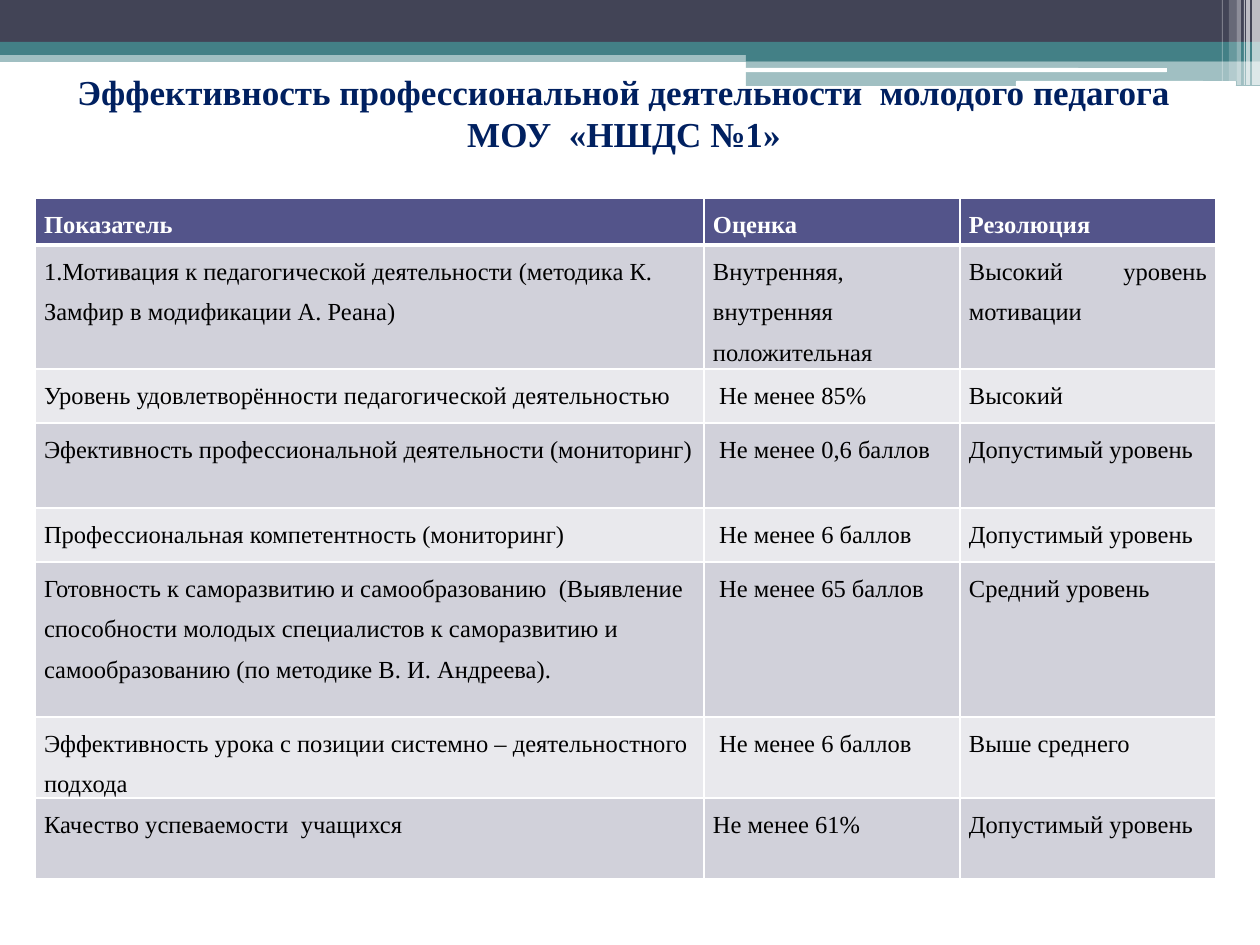
from dataclasses import dataclass

from lxml.etree import SubElement
from pptx import Presentation
from pptx.dml.color import RGBColor
from pptx.enum.shapes import MSO_SHAPE
from pptx.enum.text import MSO_ANCHOR, MSO_AUTO_SIZE, PP_ALIGN
from pptx.oxml.ns import qn
from pptx.util import Pt


@dataclass(frozen=True)
class Theme:
    font: str = "Times New Roman"
    title_size: int = 20
    cell_size: int = 14
    title: str = "002060"
    dark: str = "424456"
    teal: str = "438086"
    white: str = "FFFFFF"
    text: str = "000000"
    header: str = "53548A"
    odd: str = "D1D1DA"
    even: str = "E9E9ED"


THEME = Theme()
SCALE = 914400 / 126

TITLE = [
    "Эффективность профессиональной деятельности  молодого педагога",
    "МОУ  «НШДС №1»",
]
COLS = [669, 256, 256]
HEIGHTS = [47, 124, 54, 85, 54, 155, 81, 81]
ROWS = [
    ("Показатель", "Оценка", "Резолюция"),
    ("1.Мотивация к педагогической деятельности (методика К. Замфир в модификации А. Реана)",
     "Внутренняя, внутренняя положительная", "Высокий уровень мотивации"),
    ("Уровень удовлетворённости педагогической деятельностью", " Не менее 85%", "Высокий"),
    ("Эфективность профессиональной деятельности (мониторинг)",
     " Не менее 0,6 баллов", "Допустимый уровень"),
    ("Профессиональная компетентность (мониторинг)", " Не менее 6 баллов", "Допустимый уровень"),
    ("Готовность к саморазвитию и самообразованию  (Выявление способности молодых специалистов "
     "к саморазвитию и самообразованию (по методике В. И. Андреева).",
     " Не менее 65 баллов", "Средний уровень"),
    ("Эффективность урока с позиции системно – деятельностного подхода",
     " Не менее 6 баллов", "Выше среднего"),
    ("Качество успеваемости  учащихся", "Не менее 61%", "Допустимый уровень"),
]


def px(n):
    """Turn px into EMU."""
    return round(n * SCALE)


def rgb(color):
    """Turn a hex string into a colour."""
    return RGBColor.from_string(color)


def style(p, size, color, bold, align):
    """Format a whole paragraph."""
    p.alignment = align
    p.font.name = THEME.font
    p.font.size = Pt(size)
    p.font.bold = bold
    p.font.color.rgb = rgb(color)


def add_bar(s, box, color, alpha=100, kind=MSO_SHAPE.RECTANGLE):
    """Add one plain bar, optionally see-through."""
    sp = s.shapes.add_shape(kind, *map(px, box))
    sp.shadow.inherit = False
    sp.line.fill.background()
    sp.fill.solid()
    sp.fill.fore_color.rgb = rgb(color)
    if alpha < 100:
        clr = sp.fill._xPr.find(qn("a:solidFill"))[0]
        SubElement(clr, qn("a:alpha"), val=str(alpha * 1000))


def add_banner(s, x, y, w):
    """Draw the layered bands and the stripes at their right end."""
    step = x + 746
    for left, top, height, color, alpha in [
        (x, 50, 12, THEME.teal, 50),
        (x, 0, 42, THEME.dark, 100),
        (x, 42, 13, THEME.teal, 100),
        (step, 49, 12, THEME.teal, 100),
        (step, 61, 25, THEME.teal, 50),
    ]:
        add_bar(s, (left, y + top, x + w - left, height), color, alpha)
    for left, top, width, height in [(745, 68, 422, 4), (1016, 81, 220, 5)]:
        add_bar(s, (x + left, y + top, width, height), THEME.white,
                kind=MSO_SHAPE.ROUNDED_RECTANGLE)
    for inset, width, height, alpha in [
        (8, 8, 85, 65), (14, 4, 85, 65), (16, 1, 85, 60),
        (23, 4, 85, 40), (31, 8, 81, 20), (38, 1, 81, 30),
    ]:
        add_bar(s, (x + w - inset, y, width, height), THEME.white, alpha)


def add_title(s, x, y, w, h):
    """Place the two-line title in front of the banner."""
    sp = s.shapes.title
    sp.left, sp.top, sp.width, sp.height = map(px, (x, y, w, h))
    s.shapes._spTree.append(sp._element)
    tf = sp.text_frame
    tf.text = "\n".join(TITLE)
    tf.word_wrap = True
    tf.auto_size = MSO_AUTO_SIZE.NONE
    tf.vertical_anchor = MSO_ANCHOR.MIDDLE
    tf.margin_left = tf.margin_right = tf.margin_top = tf.margin_bottom = 0
    for p in tf.paragraphs:
        style(p, THEME.title_size, THEME.title, True, PP_ALIGN.CENTER)


def set_borders(cell, widths):
    """Give a cell white borders of the given widths in points."""
    tcPr = cell._tc.get_or_add_tcPr()
    for side, width in widths.items():
        ln = SubElement(tcPr, qn(f"a:ln{side}"), w=str(Pt(width)))
        fill = SubElement(ln, qn("a:solidFill"))
        SubElement(fill, qn("a:srgbClr"), val=THEME.white)


def fill_cell(cell, text, row, col):
    """Write and format one cell by its place in the table."""
    head = row == 0
    set_borders(cell, {"L": 1, "R": 1, "T": 3 if row == 1 else 1, "B": 3 if head else 1})
    cell.fill.solid()
    cell.fill.fore_color.rgb = rgb(
        THEME.header if head else THEME.odd if row % 2 else THEME.even)
    cell.margin_left = cell.margin_right = px(9)
    cell.margin_top = cell.margin_bottom = 0
    cell.text = text
    p = cell.text_frame.paragraphs[0]
    p.line_spacing = 1.5
    style(p, THEME.cell_size, THEME.white if head else THEME.text, head,
          PP_ALIGN.JUSTIFY if head or col else PP_ALIGN.LEFT)


def add_indicators(s, x, y):
    """Build the table of indicators, ratings and resolutions."""
    table = s.shapes.add_table(len(ROWS), len(COLS), px(x), px(y),
                               px(sum(COLS)), px(sum(HEIGHTS))).table
    for column, width in zip(table.columns, COLS):
        column.width = px(width)
    for i, (height, texts) in enumerate(zip(HEIGHTS, ROWS)):
        table.rows[i].height = px(height)
        for j, text in enumerate(texts):
            fill_cell(table.cell(i, j), text, i, j)


def main():
    """Build and save the slide."""
    prs = Presentation()
    prs.slide_width, prs.slide_height = px(1260), px(945)
    s = prs.slides.add_slide(prs.slide_layouts[5])
    add_banner(s, 0, 0, 1260)
    add_indicators(s, 35, 198)
    add_title(s, 64, 64, 1120, 97)
    prs.save("out.pptx")


if __name__ == "__main__":
    main()
